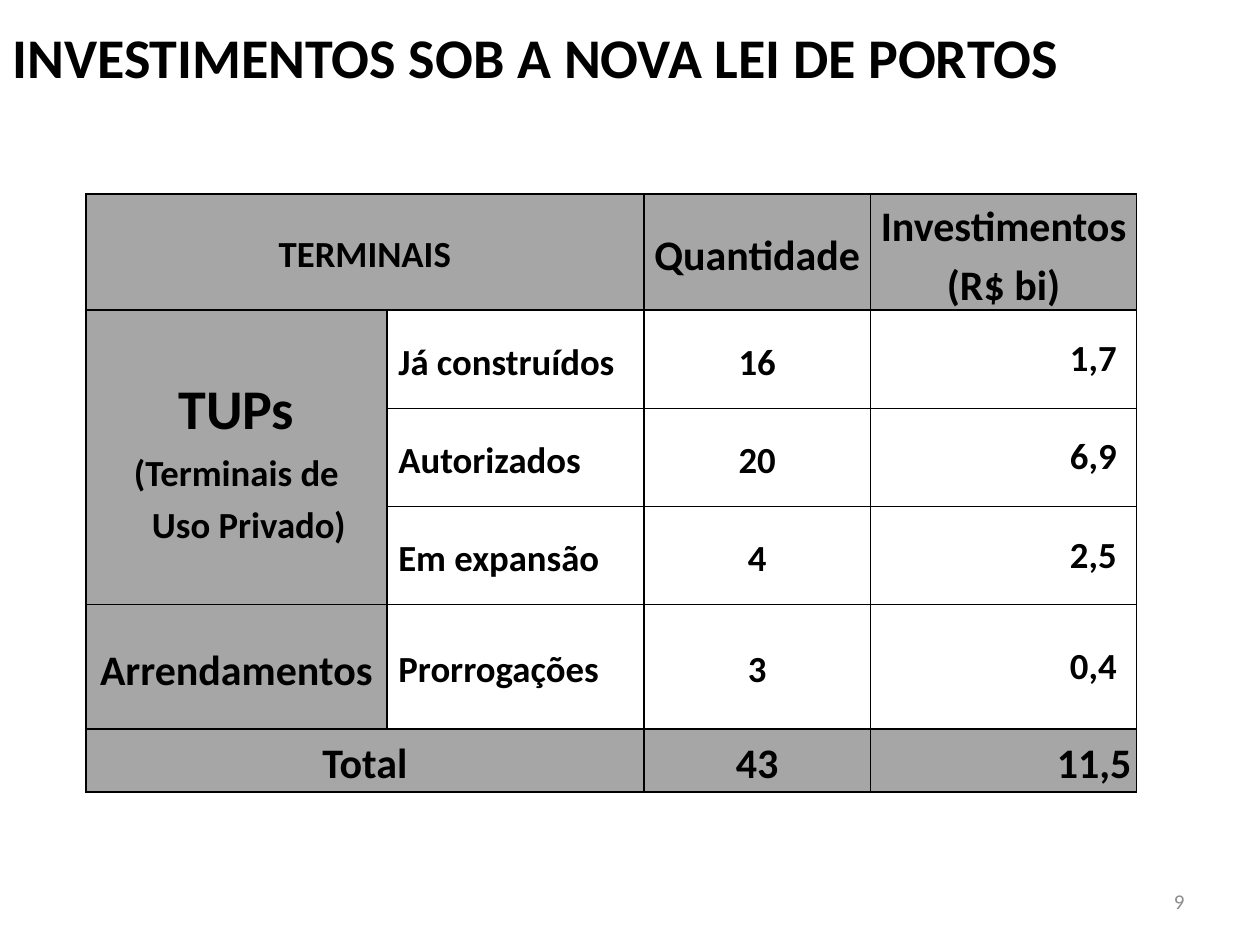
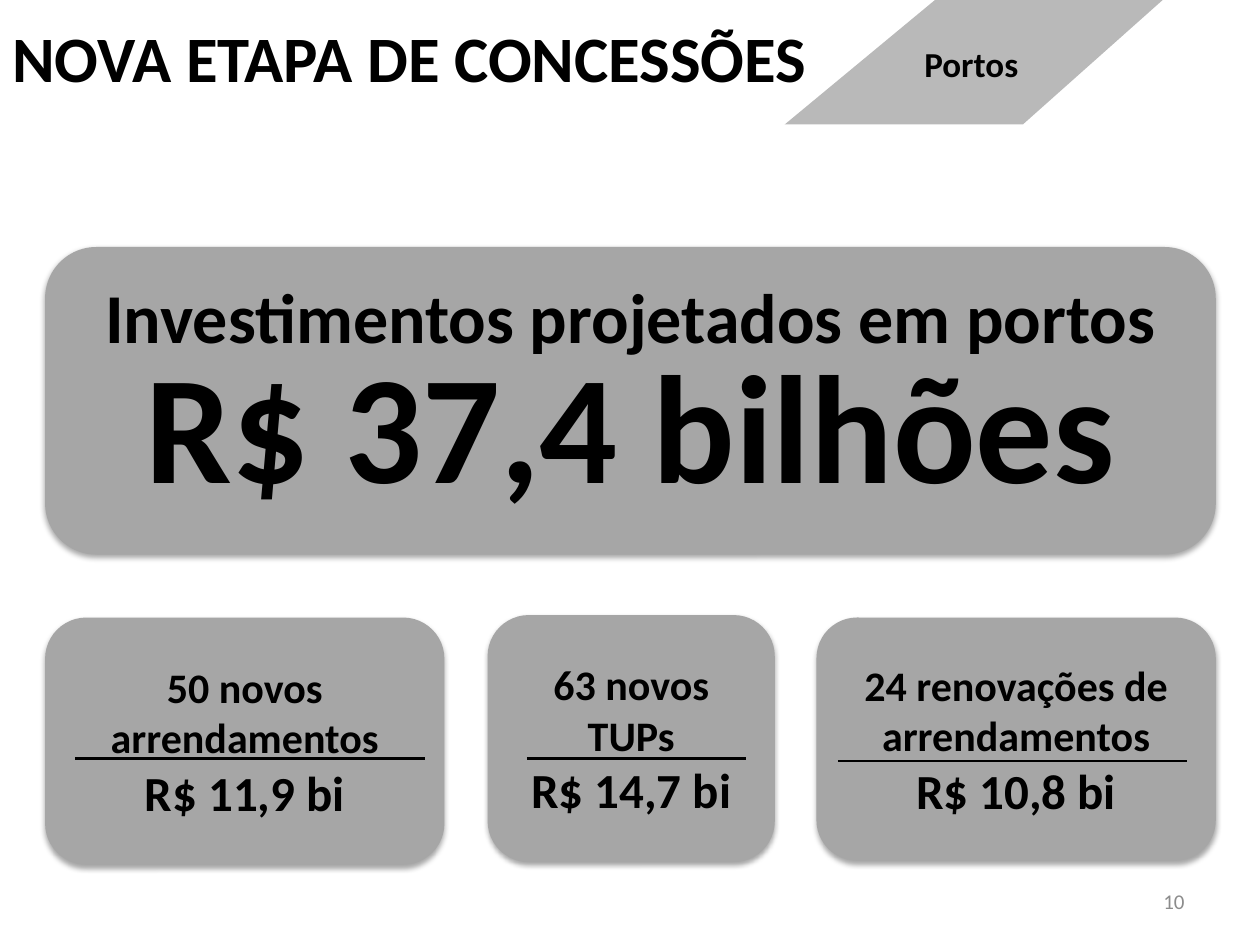
from dataclasses import dataclass

from lxml import etree
from pptx import Presentation
from pptx.dml.color import RGBColor
from pptx.enum.shapes import MSO_CONNECTOR, MSO_SHAPE
from pptx.enum.text import MSO_ANCHOR, PP_ALIGN
from pptx.oxml.ns import qn
from pptx.util import Cm, Pt

LEFT, CENTER, RIGHT = PP_ALIGN.LEFT, PP_ALIGN.CENTER, PP_ALIGN.RIGHT
TOP, MIDDLE, BOTTOM = MSO_ANCHOR.TOP, MSO_ANCHOR.MIDDLE, MSO_ANCHOR.BOTTOM
ROUNDED, STRAIGHT = MSO_SHAPE.ROUNDED_RECTANGLE, MSO_CONNECTOR.STRAIGHT


@dataclass(frozen=True)
class Theme:
    font: str = "Calibri"
    ink: str = "000000"
    panel: str = "A6A6A6"
    paper: str = "FFFFFF"
    tag: str = "808080"
    muted: str = "8C8C8C"
    # Type sizes in points
    title: int = 32
    title_large: int = 37
    number: int = 12
    tag_size: int = 20
    body: int = 21
    strong: int = 24
    amount: int = 28
    group: int = 32
    lead: int = 40
    hero: int = 88


def add_xml(parent, tag, **attrs):
    return etree.SubElement(parent, qn(tag), attrs)


class Deck:
    """Holds the theme, the presentation and the current slide."""

    def __init__(self, theme):
        self.theme = theme
        self.prs = Presentation()
        self.prs.slide_width, self.prs.slide_height = Cm(25.4), Cm(19.05)
        self.slide = None

    def new_slide(self, title, size, top, number):
        self.slide = self.prs.slides.add_slide(self.prs.slide_layouts[6])
        self.text((0, top, 22.2, 1.6), title, size, anchor=BOTTOM)
        self.text((18.21, 17.65, 5.92, 1.02), str(number), self.theme.number,
                  RIGHT, MIDDLE, self.theme.muted, bold=False)

    def set_lines(self, tf, lines, align, spacing=None, color=None, bold=True):
        """Fill a text frame with (text, size) lines."""
        for i, (text, size) in enumerate(lines):
            p = tf.paragraphs[0] if i == 0 else tf.add_paragraph()
            p.text = text
            p.alignment = align
            if spacing:
                p.line_spacing = spacing
            p.font.name, p.font.size, p.font.bold = self.theme.font, Pt(size), bold
            p.font.color.rgb = RGBColor.from_string(color or self.theme.ink)

    def text(self, box, text, size, align=LEFT, anchor=TOP, color=None, bold=True):
        tf = self.slide.shapes.add_textbox(*map(Cm, box)).text_frame
        tf.word_wrap, tf.vertical_anchor = True, anchor
        self.set_lines(tf, [(text, size)], align, color=color, bold=bold)

    def paint(self, sp, color):
        sp.shadow.inherit = False
        sp.fill.solid()
        sp.fill.fore_color.rgb = RGBColor.from_string(color)
        sp.line.fill.background()

    def card(self, box, lines, spacing=None):
        sp = self.slide.shapes.add_shape(ROUNDED, *map(Cm, box))
        self.paint(sp, self.theme.panel)
        # Soft shadow straight below the card
        effects = sp._element.spPr.find(qn("a:effectLst"))
        shadow = add_xml(effects, "a:outerShdw", blurRad=str(Pt(3.1)),
                         dist=str(Pt(1.8)), dir="5400000", rotWithShape="0")
        tint = add_xml(shadow, "a:srgbClr", val=self.theme.ink)
        add_xml(tint, "a:alpha", val="35000")
        tf = sp.text_frame
        tf.word_wrap, tf.vertical_anchor = True, MIDDLE
        self.set_lines(tf, lines, CENTER, spacing)

    def rule(self, x1, x2, y):
        ln = self.slide.shapes.add_connector(STRAIGHT, Cm(x1), Cm(y), Cm(x2), Cm(y))
        ln.line.color.rgb = RGBColor.from_string(self.theme.ink)
        ln.line.width = Pt(1.5)
        add_xml(ln._element.spPr, "a:effectLst")

    def polygon(self, points, color, opacity):
        start, *rest = [(Cm(x), Cm(y)) for x, y in points]
        builder = self.slide.shapes.build_freeform(*start)
        builder.add_line_segments(rest, close=True)
        sp = builder.convert_to_shape()
        self.paint(sp, color)
        clr = sp._element.spPr.find(qn("a:solidFill"))[0]
        add_xml(clr, "a:alpha", val=str(opacity * 1000))

    def table(self, left, top, widths, heights):
        tbl = self.slide.shapes.add_table(
            len(heights), len(widths), Cm(left), Cm(top),
            Cm(sum(widths)), Cm(sum(heights))).table
        tbl.first_row = tbl.horz_banding = False
        for col, width in zip(tbl.columns, widths):
            col.width = Cm(width)
        for row, height in zip(tbl.rows, heights):
            row.height = Cm(height)
        for cell in tbl.iter_cells():
            tcPr = cell._tc.get_or_add_tcPr()
            for side in ("a:lnL", "a:lnR", "a:lnT", "a:lnB"):
                ln = add_xml(tcPr, side, w=str(Pt(1)))
                add_xml(add_xml(ln, "a:solidFill"), "a:srgbClr", val=self.theme.ink)
        return tbl

    def cell(self, cell, lines, fill, align=CENTER, spacing=1.15,
             margins=(0.1, 0, 0.1, 0)):
        cell.fill.solid()
        cell.fill.fore_color.rgb = RGBColor.from_string(fill)
        (cell.margin_left, cell.margin_top,
         cell.margin_right, cell.margin_bottom) = map(Cm, margins)
        cell.vertical_anchor = MIDDLE
        self.set_lines(cell.text_frame, lines, align, spacing)


def investments_slide(deck):
    t = deck.theme
    deck.new_slide("INVESTIMENTOS SOB A NOVA LEI DE PORTOS", t.title, 0.33, 9)
    tbl = deck.table(1.73, 3.91, [6.07, 5.18, 4.57, 5.36],
                     [2.34, 1.98, 1.98, 1.98, 2.51, 1.27])
    for first, last in [((0, 0), (0, 1)), ((1, 0), (3, 0)), ((5, 0), (5, 1))]:
        tbl.cell(*first).merge(tbl.cell(*last))

    # Grey headings and totals
    headings = {
        (0, 0): [("TERMINAIS", t.body)],
        (0, 2): [("Quantidade", t.strong)],
        (0, 3): [("Investimentos\v(R$ bi)", t.strong)],
        (1, 0): [("TUPs", t.group), ("(Terminais de", t.body),
                 ("Uso Privado)", t.body)],
        (4, 0): [("Arrendamentos", t.strong)],
        (5, 0): [("Total", t.strong)],
        (5, 2): [("43", t.strong)],
        (5, 3): [("11,5", t.strong)],
    }
    for place, lines in headings.items():
        deck.cell(tbl.cell(*place), lines, t.panel,
                  RIGHT if place == (5, 3) else CENTER)
    last_line = tbl.cell(1, 0).text_frame.paragraphs[-1]
    last_line._p.get_or_add_pPr().set("marL", str(Cm(0.5)))

    # White body rows
    rows = [("Já construídos", "16", "1,7"), ("Autorizados", "20", "6,9"),
            ("Em expansão", "4", "2,5"), ("Prorrogações", "3", "0,4")]
    styles = [(LEFT, 1.15, 0.23), (CENTER, 1.15, 0.23), (RIGHT, None, 0.4)]
    for r, row in enumerate(rows, 1):
        for c, (text, (align, spacing, right)) in enumerate(zip(row, styles), 1):
            deck.cell(tbl.cell(r, c), [(text, t.body)], t.paper, align, spacing,
                      (0.23, 0.11, right, 0.11))


def concessions_slide(deck):
    t = deck.theme
    deck.new_slide("NOVA ETAPA DE CONCESSÕES", t.title_large, 0.46, 10)

    # Breakdown cards, each with a rule between label and amount
    cards = [
        ((0.91, 12.45, 8.05, 4.98), "50 novos arrendamentos", "R$ 11,9 bi",
         (1.52, 8.56, 15.29)),
        ((9.83, 12.4, 5.79, 4.98), "63 novos TUPs", "R$ 14,7 bi",
         (10.62, 15.04, 15.29)),
        ((16.46, 12.45, 8.05, 4.9), "24 renovações de arrendamentos", "R$ 10,8 bi",
         (16.89, 23.93, 15.34)),
    ]
    for box, label, amount, rule in cards:
        deck.card(box, [(label, t.strong), (amount, t.amount)])
        deck.rule(*rule)

    # Headline figure
    deck.card((0.91, 4.98, 23.6, 6.2),
              [("Investimentos projetados em portos", t.lead),
               ("R$ 37,4 bilhões", t.hero)], spacing=0.85)

    # Section tag
    deck.polygon([(15.82, 2.51), (18.85, 0), (23.44, 0), (20.62, 2.51)], t.tag, 55)
    deck.text((15.75, 0.74, 5.03, 1.93), "Portos", t.tag_size, RIGHT)


def main():
    deck = Deck(Theme())
    investments_slide(deck)
    concessions_slide(deck)
    deck.prs.save("out.pptx")


if __name__ == "__main__":
    main()
